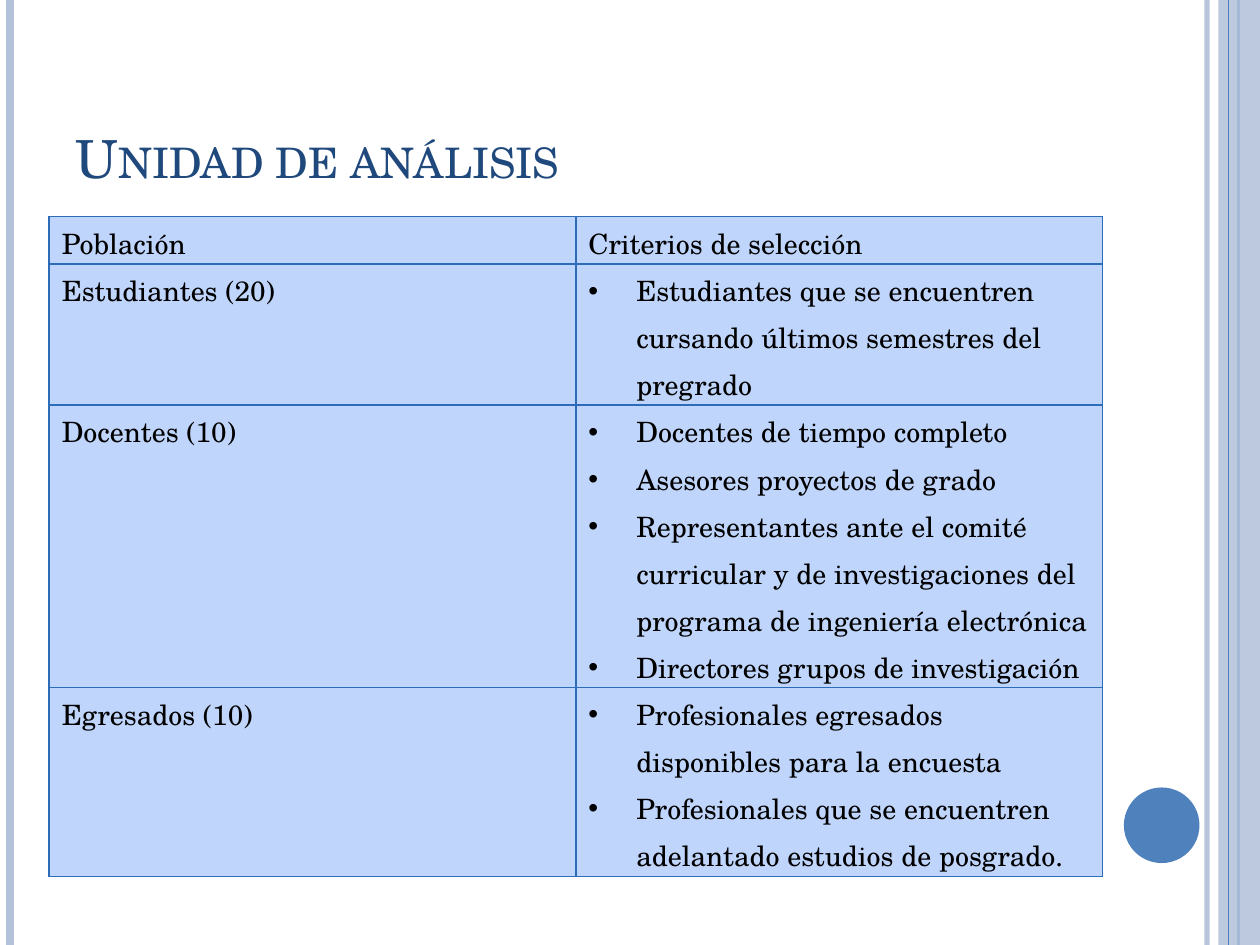
import lxml.etree
import pptx
import pptx.dml.color
import pptx.enum.shapes
import pptx.enum.text
import pptx.oxml.ns
import pptx.util

Inches = pptx.util.Inches
Pt = pptx.util.Pt
RGBColor = pptx.dml.color.RGBColor
qn = pptx.oxml.ns.qn

FONT = "TeX Gyre Schola"
PALE_BLUE = RGBColor(0xB3, 0xC1, 0xDB)
BLUE = RGBColor(0x4F, 0x81, 0xBD)
TITLE_BLUE = RGBColor(0x1F, 0x49, 0x7D)
CELL_BLUE = RGBColor(0xBF, 0xD5, 0xFB)
BORDER_BLUE = RGBColor(0x2C, 0x6C, 0xB9)
BLACK = RGBColor(0, 0, 0)

HEADINGS = ("Población", "Criterios de selección")
POPULATIONS = (
    ("Estudiantes (20)", (
        "Estudiantes que se encuentren cursando últimos semestres del pregrado",
    )),
    ("Docentes (10)", (
        "Docentes de tiempo completo",
        "Asesores proyectos de grado",
        "Representantes ante el comité curricular y de investigaciones "
        "del programa de ingeniería electrónica",
        "Directores grupos de investigación",
    )),
    ("Egresados (10)", (
        "Profesionales egresados disponibles para la encuesta",
        "Profesionales que se encuentren adelantado estudios de posgrado.",
    )),
)
ROW_HEIGHTS = (0.3, 0.6, 0.6, 1.5)


def set_alpha(element, percent):
    """Make the solid colour inside an element partly transparent."""
    colour = next(element.iter(qn("a:srgbClr")))
    lxml.etree.SubElement(colour, qn("a:alpha"), val=str(percent * 1000))


def add_stripe(slide, x, top, height, colour, width, alpha=100):
    """Draw one vertical line."""
    stripe = slide.shapes.add_connector(
        pptx.enum.shapes.MSO_CONNECTOR.STRAIGHT, x, top, x, top + height)
    stripe.line.color.rgb = colour
    stripe.line.width = Pt(width)
    properties = stripe._element.spPr
    if alpha < 100:
        set_alpha(properties, alpha)
    lxml.etree.SubElement(properties, qn("a:effectLst"))


def add_solid(slide, preset, left, top, width, height, colour):
    """Draw a flat shape without an outline."""
    solid = slide.shapes.add_shape(preset, left, top, width, height)
    solid.shadow.inherit = False
    solid.fill.solid()
    solid.fill.fore_color.rgb = colour
    solid.line.fill.background()
    return solid


def add_frame(slide, left, top, width, height):
    """Draw the side stripes, the right band and the disc."""
    right = left + width
    shapes = pptx.enum.shapes.MSO_SHAPE
    add_stripe(slide, right - Inches(0.42), top, height, PALE_BLUE, 3, 93)
    add_stripe(slide, left + Inches(0.08), top, height, PALE_BLUE, 4.5)
    add_stripe(slide, right - Inches(0.17), top, height, BLUE, 1.5)
    band = add_solid(slide, shapes.RECTANGLE, right - Inches(0.33), top,
                     Inches(0.33), height, PALE_BLUE)
    set_alpha(band._element.spPr, 87)
    add_stripe(slide, right - Inches(0.25), top, height, BLUE, 0.75)
    add_solid(slide, shapes.OVAL, right - Inches(1.08),
              top + height - Inches(1.25), Inches(0.6), Inches(0.6), BLUE)


def format_font(paragraph, size, colour):
    """Set the typeface, size and colour of a paragraph."""
    paragraph.font.name = FONT
    paragraph.font.size = Pt(size)
    paragraph.font.color.rgb = colour


def place_title(slide, wording, left, top, width, height):
    """Fill the title placeholder in small capitals."""
    title = slide.shapes.title
    title.left, title.top, title.width, title.height = left, top, width, height
    frame = title.text_frame
    frame.text = wording
    frame.auto_size = pptx.enum.text.MSO_AUTO_SIZE.NONE
    frame.vertical_anchor = pptx.enum.text.MSO_ANCHOR.BOTTOM
    heading = frame.paragraphs[0]
    heading.alignment = pptx.enum.text.PP_ALIGN.LEFT
    format_font(heading, 30, TITLE_BLUE)
    heading.runs[0]._r.get_or_add_rPr().set("cap", "small")


def add_bullet(paragraph):
    """Give a paragraph a round bullet and a hanging indent."""
    properties = paragraph._p.get_or_add_pPr()
    properties.set("marL", str(Inches(0.38)))
    properties.set("indent", str(-Inches(0.38)))
    bullet_font = lxml.etree.Element(qn("a:buFont"), typeface="Arial")
    bullet = lxml.etree.Element(qn("a:buChar"), char="•")
    position = 1 if properties.find(qn("a:lnSpc")) is not None else 0
    properties.insert(position, bullet_font)
    properties.insert(position + 1, bullet)


def add_borders(cell):
    """Outline the four sides of a cell."""
    properties = cell._tc.get_or_add_tcPr()
    for side in ("lnL", "lnR", "lnT", "lnB"):
        border = lxml.etree.SubElement(
            properties, qn(f"a:{side}"), w=str(Pt(1)))
        fill = lxml.etree.SubElement(border, qn("a:solidFill"))
        lxml.etree.SubElement(fill, qn("a:srgbClr"), val=str(BORDER_BLUE))


def fill_cell(cell, lines, bulleted):
    """Write and format the paragraphs of one cell."""
    add_borders(cell)
    cell.fill.solid()
    cell.fill.fore_color.rgb = CELL_BLUE
    cell.margin_left = cell.margin_right = Inches(0.1)
    cell.margin_top = cell.margin_bottom = 0
    cell.text = "\n".join(lines)
    for paragraph in cell.text_frame.paragraphs:
        paragraph.line_spacing = 1.15
        format_font(paragraph, 16, BLACK)
        if bulleted:
            add_bullet(paragraph)


def add_population_table(slide, left, top, width, height):
    """Build the table of populations and selection criteria."""
    table = slide.shapes.add_table(
        len(POPULATIONS) + 1, len(HEADINGS), left, top, width, height).table
    table.first_row = table.horz_banding = False
    for row, row_height in zip(table.rows, ROW_HEIGHTS):
        row.height = Inches(row_height)
    for column, heading in enumerate(HEADINGS):
        fill_cell(table.cell(0, column), [heading], False)
    for row, (population, criteria) in enumerate(POPULATIONS, start=1):
        fill_cell(table.cell(row, 0), [population], False)
        fill_cell(table.cell(row, 1), criteria, True)


def main():
    """Build and save the slide."""
    deck = pptx.Presentation()
    deck.slide_width, deck.slide_height = Inches(10), Inches(7.5)
    slide = deck.slides.add_slide(deck.slide_layouts[5])
    add_frame(slide, 0, 0, deck.slide_width, deck.slide_height)
    place_title(slide, "Unidad de análisis",
                Inches(0.5), Inches(0.3), Inches(8.17), Inches(1.25))
    add_population_table(slide, Inches(0.39), Inches(1.72),
                         Inches(8.36), Inches(sum(ROW_HEIGHTS)))
    deck.save("out.pptx")


if __name__ == "__main__":
    main()
